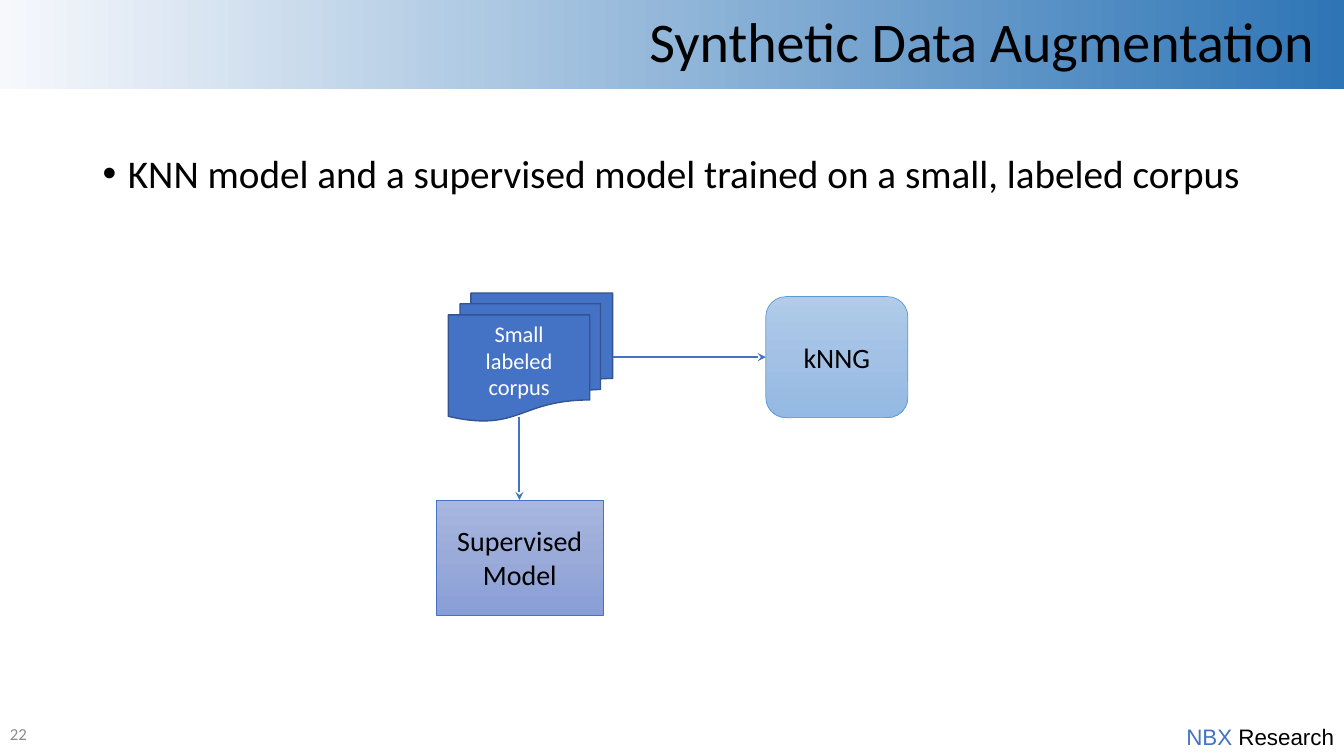
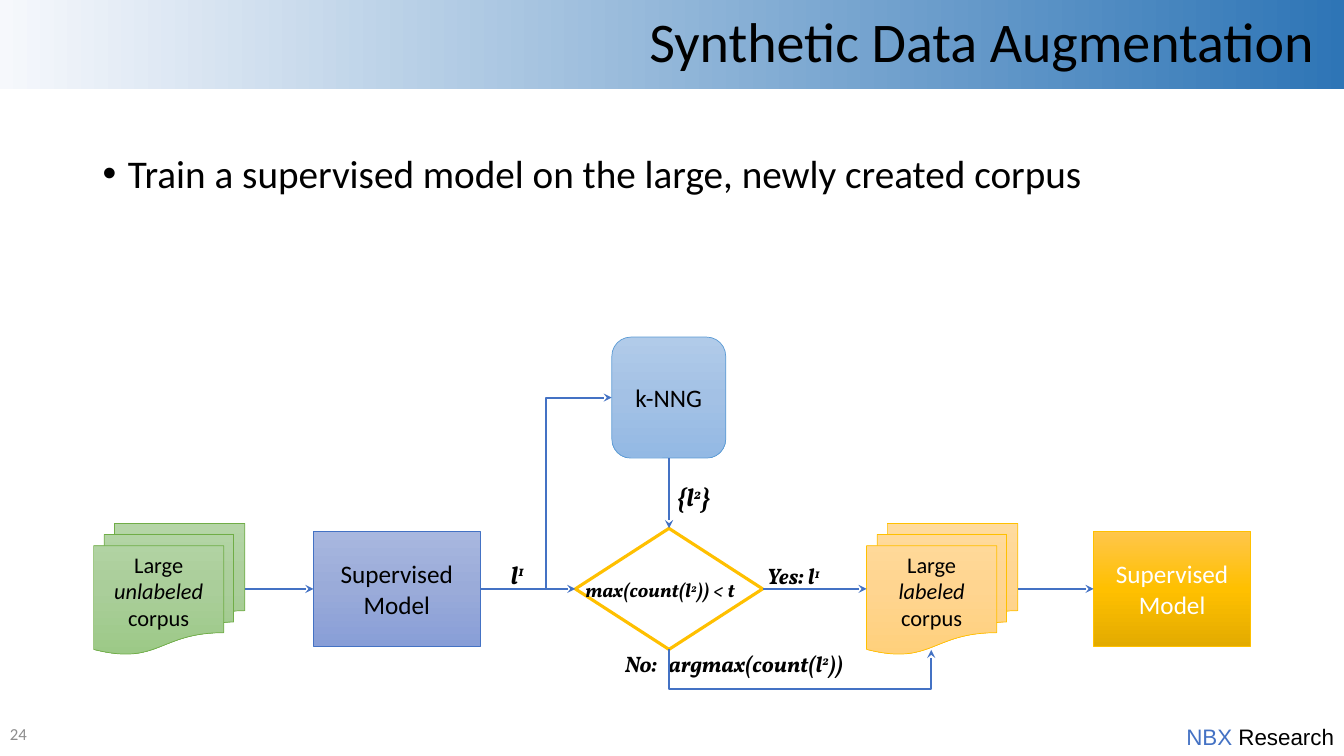
from lxml import etree
from pptx import Presentation
from pptx import util as u
from pptx.dml.color import RGBColor
from pptx.enum import shapes, text
from pptx.oxml.ns import qn

COLOURS = {
    "black": "000000", "white": "FFFFFF", "grey": "8C8C8C",
    "blue": "4472C4", "navy": "325491", "sky": "5B9BD5",
    "green": "70AD47", "amber": "FFC000",
}
GRADIENTS = {
    "band": ("F6F8FC", "2E75B6"),
    "blue": ("A8B7DF", "9AABD9", "889ED7"),
    "sky": ("B1CBE9", "A3C1E5", "93B9E4"),
    "green": ("B5D5A7", "AACE9A", "9CC987"),
    "peach": ("FFDB9E", "FFD590", "FFD07C"),
    "amber": ("FFC64B", "FFC000", "E3AB00"),
}
WIDTH, HEIGHT = 33.87, 19.05
RIGHT, CENTRE = text.PP_ALIGN.RIGHT, text.PP_ALIGN.CENTER
TOP, MIDDLE = text.MSO_ANCHOR.TOP, text.MSO_ANCHOR.MIDDLE
RECT = shapes.MSO_SHAPE.RECTANGLE
ROUNDED = shapes.MSO_SHAPE.ROUNDED_RECTANGLE
DOCUMENTS = shapes.MSO_SHAPE.FLOWCHART_MULTIDOCUMENT
DIAMOND = shapes.MSO_SHAPE.FLOWCHART_DECISION
MODEL = [["Supervised"], ["Model"]]


def rgb(name):
    return RGBColor.from_string(COLOURS[name])


def write(frame, paragraphs, size=18, font="Calibri", colour="black", bold=False,
          italic=False, align=text.PP_ALIGN.LEFT, anchor=TOP, spacing=None):
    """Fill a frame; a paragraph lists spans, each a string or (string, changes)."""
    frame.word_wrap = True
    frame.vertical_anchor = anchor
    for index, spans in enumerate(paragraphs):
        para = frame.add_paragraph() if index else frame.paragraphs[0]
        para.alignment = align
        if spacing:
            para.line_spacing = spacing
        for item in spans:
            words, changes = (item, {}) if isinstance(item, str) else item
            span = para.add_run()
            span.text = words
            span.font.name = font
            span.font.size = u.Pt(size)
            span.font.bold = bold
            span.font.italic = changes.get("italic", italic)
            span.font.color.rgb = rgb(changes.get("colour", colour))
            if changes.get("raised"):
                span.font._element.set("baseline", "30000")


def raised(words):
    return words, {"raised": True}


def corpus(kind):
    return [["Large"], [(kind, {"italic": True})], ["corpus"]]


def fill_gradient(shape, name, angle):
    """Spread the colours evenly; the angle runs counter-clockwise."""
    shape.fill.gradient()
    shape.fill.gradient_angle = angle
    stops = shape._element.spPr.find(qn("a:gradFill")).find(qn("a:gsLst"))
    for stop in list(stops):
        stops.remove(stop)
    colours = GRADIENTS[name]
    for index, value in enumerate(colours):
        position = 100000 * index // (len(colours) - 1)
        stop = etree.SubElement(stops, qn("a:gs"), pos=str(position))
        etree.SubElement(stop, qn("a:srgbClr"), val=value)


class Slides:
    def __init__(self):
        self.deck = Presentation()
        self.deck.slide_width = u.Cm(WIDTH)
        self.deck.slide_height = u.Cm(HEIGHT)
        self.page = None

    def start(self, title, bullet, number):
        self.page = self.deck.slides.add_slide(self.deck.slide_layouts[1])
        self.title(title)
        self.bullet(bullet)
        self.label(0, 17.98, 1.07, 1.02, [[number]], size=12, colour="grey",
                   anchor=MIDDLE)
        self.label(28.7, 18.11, WIDTH - 28.7, 0.94,
                   [[("NBX", {"colour": "blue"}), " Research"]],
                   size=16, font="Arial", align=RIGHT)

    def place(self, box, left, top, width, height):
        box.left, box.top = u.Cm(left), u.Cm(top)
        box.width, box.height = u.Cm(width), u.Cm(height)

    def title(self, words):
        box = self.page.shapes.title
        self.place(box, 0, 0, WIDTH, 2.24)
        fill_gradient(box, "band", 0)
        frame = box.text_frame
        frame.auto_size = text.MSO_AUTO_SIZE.NONE
        frame.margin_right = u.Cm(0.76)
        write(frame, [[words]], size=40, align=RIGHT, anchor=MIDDLE, spacing=0.9)

    def bullet(self, words):
        box = self.page.placeholders[1]
        self.place(box, 2.33, 3.76, 29.21, 13.4)
        box.text_frame.auto_size = text.MSO_AUTO_SIZE.NONE
        write(box.text_frame, [[words]], size=28, spacing=0.9)
        para = box.text_frame.paragraphs[0]
        para.space_before = u.Pt(10)
        settings = para._p.get_or_add_pPr()
        settings.set("marL", str(u.Cm(0.64)))
        settings.set("indent", str(-u.Cm(0.64)))
        etree.SubElement(settings, qn("a:buFont"), typeface="Arial")
        etree.SubElement(settings, qn("a:buChar"), char="•")

    def label(self, left, top, width, height, paragraphs, **style):
        box = self.page.shapes.add_textbox(*map(u.Cm, (left, top, width, height)))
        write(box.text_frame, paragraphs, **style)

    def formula(self, left, top, width, spans, size):
        self.label(left, top, width, 1, [spans], size=size, font="Vollkorn",
                   bold=True, italic=True)

    def block(self, preset, left, middle, width, height, line, paragraphs=(),
              gradient=None, solid=None, weight=0.5, **style):
        """Draw a flow-chart block centred on the height given by middle."""
        shape = self.page.shapes.add_shape(
            preset, *map(u.Cm, (left, middle - height / 2, width, height)))
        shape.shadow.inherit = False
        if gradient:
            fill_gradient(shape, gradient, 270)
        else:
            shape.fill.solid()
            shape.fill.fore_color.rgb = rgb(solid)
        shape.line.color.rgb = rgb(line)
        shape.line.width = u.Pt(weight)
        anchor = TOP if preset == DOCUMENTS else MIDDLE
        write(shape.text_frame, paragraphs, align=CENTRE, anchor=anchor, **style)

    def documents(self, left, middle, paragraphs, line, width=3.81, height=3.3, **style):
        self.block(DOCUMENTS, left, middle, width, height, line, paragraphs,
                   size=16, **style)

    def model(self, left, middle, width=4.2, line="blue", **style):
        self.block(RECT, left, middle, width, 2.9, line, MODEL, gradient=line, **style)

    def neighbours(self, left, middle, width, words, size):
        self.block(ROUNDED, left, middle, width, 3.05, "sky", [[words]],
                   gradient="sky", size=size)

    def arrow(self, start, end, elbow=False):
        kind = shapes.MSO_CONNECTOR.ELBOW if elbow else shapes.MSO_CONNECTOR.STRAIGHT
        arrow = self.page.shapes.add_connector(kind, *map(u.Cm, start + end))
        arrow.line.color.rgb = rgb("blue")
        arrow.line.width = u.Pt(1.5)
        line = arrow.line._get_or_add_ln()
        etree.SubElement(line, qn("a:tailEnd"), type="stealth")
        etree.SubElement(arrow._element.spPr, qn("a:effectLst"))
        return arrow

    def under_arrow(self, left, right, level, drop):
        """Run down from left, along, and up to right, both ends at one level."""
        depth, length = 0.01, right - left
        arrow = self.arrow((left, level), (right, level), elbow=True)
        self.place(arrow, (left + right - depth) / 2, level - length / 2, depth, length)
        settings = arrow._element.spPr
        frame = settings.find(qn("a:xfrm"))
        frame.set("rot", str(270 * 60000))
        frame.set("flipH", "1")
        guides = settings.find(qn("a:prstGeom")).get_or_add_avLst()
        etree.SubElement(guides, qn("a:gd"), name="adj1",
                         fmla=f"val {round(drop / depth * 100000)}")


def training_slide(slides):
    slides.start("Synthetic Data Augmentation",
                 "KNN model and a supervised model trained on a small, labeled corpus",
                 "22")
    row = 9
    slides.model(11, 14.05, size=20)
    slides.neighbours(19.3, row, 3.58, "kNNG", 20)
    slides.documents(11.3, row, [["Small"], ["labeled"], ["corpus"]], "navy",
                     width=4.14, height=3.23, solid="blue", weight=1, colour="white")
    slides.arrow((13.09, 10.5), (13.09, 12.6))
    slides.arrow((15.44, row), (19.3, row))


def augmentation_slide(slides):
    slides.start("Synthetic Data Augmentation",
                 "Train a supervised model on the large, newly created corpus", "24")
    row, upper, axis = 14.84, 10.02, 16.86
    slides.model(7.9, row)
    slides.arrow((12.1, row), (15.42, upper), elbow=True)
    slides.documents(21.84, row, corpus("labeled"), "amber", gradient="peach")
    slides.documents(2.36, row, corpus("unlabeled"), "green", gradient="green")
    slides.model(27.56, row, width=3.96, line="amber", colour="white")
    slides.neighbours(15.42, upper, 2.87, "k-NNG", 18)
    slides.block(DIAMOND, 14.5, row, 4.72, 3.05, "amber", solid="white", weight=2.25)

    slides.formula(12.62, 13.97, 1.1, ["l", raised("1")], 18)
    slides.formula(16.81, 12.01, 2, ["{l", raised("2"), "}"], 18)
    slides.formula(14.5, 14.45, 4.72, ["max(count(l", raised("2"), ")) < t"], 14)
    slides.formula(15.49, 16.26, 1.5, ["No:"], 16)
    slides.formula(16.6, 16.26, 5.5, ["argmax(count(l", raised("2"), "))"], 16)
    slides.formula(19.08, 14.05, 2.87, ["Yes: l", raised("1")], 16)

    for start, end in ((6.17, 7.9), (12.1, 14.5), (19.22, 21.84), (25.65, 27.56)):
        slides.arrow((start, row), (end, row))
    slides.arrow((axis, 11.55), (axis, 13.31))
    slides.under_arrow(axis, 23.47, 16.37, 1)


def main():
    slides = Slides()
    training_slide(slides)
    augmentation_slide(slides)
    slides.deck.save("out.pptx")


if __name__ == "__main__":
    main()
